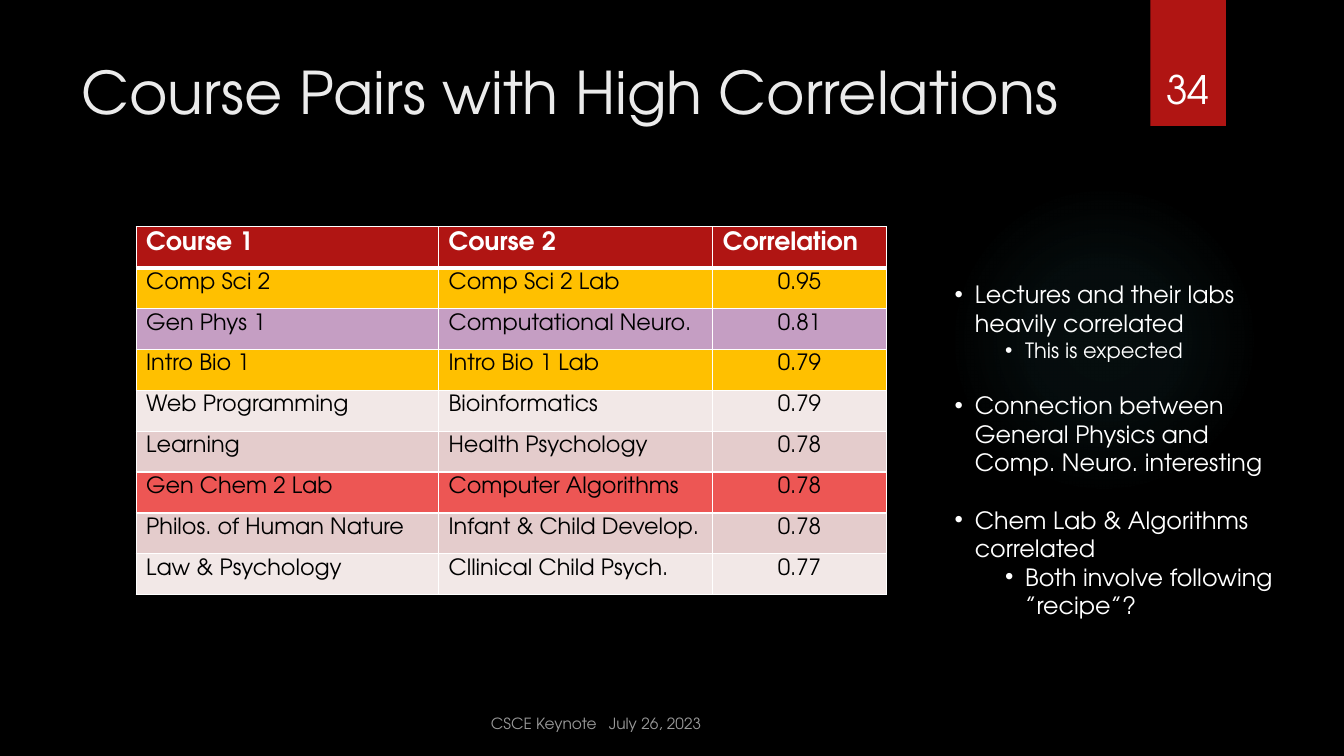
from lxml.etree import SubElement
from pptx import Presentation
from pptx.dml.color import RGBColor
from pptx.enum.shapes import MSO_SHAPE
from pptx.enum.text import MSO_ANCHOR, PP_ALIGN
from pptx.oxml import parse_xml
from pptx.oxml.ns import nsdecls, qn
from pptx.util import Inches, Pt

FONT = "TeX Gyre Adventor"
COLORS = {
    "black": "000000", "white": "FFFFFF", "title": "EBEBEB", "footer": "999999",
    "red": "B01513", "gold": "FFC000", "purple": "C59EC3", "coral": "ED5654",
    "light": "F2E8E7", "dark": "E4CCCC", "glow": "50B9C1",
}
TITLE = "Course Pairs with High Correlations"
PAGE_NUMBER = "34"
FOOTER = "CSCE Keynote\tJuly 26, 2023"
HEADER = ("Course 1", "Course 2", "Correlation")
COURSE_PAIRS = [
    ("gold", "Comp Sci 2", "Comp Sci 2 Lab", "0.95"),
    ("purple", "Gen Phys 1", "Computational Neuro.", "0.81"),
    ("gold", "Intro Bio 1", "Intro Bio 1 Lab", "0.79"),
    ("light", "Web Programming", "Bioinformatics", "0.79"),
    ("dark", "Learning", "Health Psychology", "0.78"),
    ("coral", "Gen Chem 2 Lab", "Computer Algorithms", "0.78"),
    ("dark", "Philos. of Human Nature", "Infant & Child Develop.", "0.78"),
    ("light", "Law & Psychology", "Cllinical Child Psych.", "0.77"),
]
# level, size, text
REMARKS = [
    (0, 17, "Lectures and their labs heavily correlated"),
    (1, 15, "This is expected"),
    (0, 17, "Connection between General Physics and Comp. Neuro. interesting"),
    (0, 17, "Chem Lab & Algorithms correlated"),
    (1, 17, "Both involve following ”recipe”?"),
]
COLUMN_WIDTHS = (3, 2.72, 1.72)
TABLE_HEIGHT = 3.65
GLOW_STOPS = [(0, 7), (36, 6), (69, 0)]  # position and opacity in percent


def rgb(name):
    return RGBColor.from_string(COLORS[name])


def write(para, text, size, color, bold=False):
    span = para.add_run()
    span.text = text
    formats = {"name": FONT, "size": Pt(size), "bold": bold}
    for key, value in formats.items():
        setattr(span.font, key, value)
    span.font.color.rgb = rgb(color)


def add_box(page, place, anchor=MSO_ANCHOR.TOP):
    """Add a wrapping text box and return its text frame."""
    frame = page.shapes.add_textbox(*map(Inches, place)).text_frame
    frame.word_wrap = True
    frame.vertical_anchor = anchor
    return frame


def add_plain_shape(page, kind, place):
    shape = page.shapes.add_shape(kind, *map(Inches, place))
    shape.shadow.inherit = False
    shape.line.fill.background()
    return shape


def add_glow(page):
    glow = add_plain_shape(page, MSO_SHAPE.OVAL, (9.41, 1.83, 3.08, 3.08))
    stops = "".join(
        f'<a:gs pos="{position * 1000}"><a:srgbClr val="{COLORS["glow"]}">'
        f'<a:alpha val="{opacity * 1000}"/></a:srgbClr></a:gs>'
        for position, opacity in GLOW_STOPS)
    gradient = parse_xml(
        f'<a:gradFill {nsdecls("a")}><a:gsLst>{stops}</a:gsLst><a:path path="circle">'
        '<a:fillToRect l="50000" t="50000" r="50000" b="50000"/></a:path></a:gradFill>')
    glow.element.spPr.find(qn("a:prstGeom")).addnext(gradient)


def style_cell(cell, fill, bottom):
    """Set white borders, fill and insets; bottom is the lower border in points."""
    properties = cell._tc.get_or_add_tcPr()
    for side, width in (("L", 1), ("R", 1), ("T", 1), ("B", bottom)):
        line = SubElement(properties, qn(f"a:ln{side}"), w=str(Pt(width)))
        solid = SubElement(line, qn("a:solidFill"))
        SubElement(solid, qn("a:srgbClr"), val=COLORS["white"])
    cell.fill.solid()
    cell.fill.fore_color.rgb = rgb(fill)
    cell.margin_top = Inches(0.05)
    cell.margin_bottom = 0


def add_pairs_table(page):
    rows = [("red", *HEADER), *COURSE_PAIRS]
    size = (sum(COLUMN_WIDTHS), TABLE_HEIGHT)
    table = page.shapes.add_table(
        len(rows), len(HEADER), *map(Inches, (1.35, 2.25, *size))).table
    for column, width in zip(table.columns, COLUMN_WIDTHS):
        column.width = Inches(width)
    for r, (fill, *texts) in enumerate(rows):
        table.rows[r].height = Inches(TABLE_HEIGHT / len(rows))
        head = r == 0
        for c, text in enumerate(texts):
            cell = table.cell(r, c)
            style_cell(cell, fill, bottom=3 if head else 1)
            para = cell.text_frame.paragraphs[0]
            if c == 2 and not head:
                para.alignment = PP_ALIGN.CENTER
            write(para, text, 18 if head else 16, "white" if head else "black", head)


def add_remarks(page):
    frame = add_box(page, (9.37, 2.73, 3.53, 3.5))
    for i, (level, size, text) in enumerate(REMARKS):
        para = frame.paragraphs[0] if i == 0 else frame.add_paragraph()
        properties = para._p.get_or_add_pPr()
        properties.set("marL", str(Inches(0.2 + 0.5 * level)))
        properties.set("indent", str(Inches(-0.2)))
        SubElement(properties, qn("a:buFont"), typeface="Arial")
        SubElement(properties, qn("a:buChar"), char="•")
        para.level = level
        if i and level == 0:
            para.space_before = Pt(20.4)
        write(para, text, size, "white")


def main():
    deck = Presentation()
    deck.slide_width, deck.slide_height = Inches(13.33), Inches(7.5)
    page = deck.slides.add_slide(deck.slide_layouts[6])
    page.background.fill.solid()
    page.background.fill.fore_color.rgb = rgb("black")

    add_glow(page)
    ribbon = add_plain_shape(page, MSO_SHAPE.RECTANGLE, (11.41, 0, 0.75, 1.25))
    ribbon.fill.solid()
    ribbon.fill.fore_color.rgb = rgb("red")

    title = add_box(page, (0.71, 0.5, 10.29, 1.53))
    write(title.paragraphs[0], TITLE, 42, "title")
    add_pairs_table(page)

    footer = add_box(page, (4.77, 6.99, 4.22, 0.33), MSO_ANCHOR.BOTTOM).paragraphs[0]
    tabs = SubElement(footer._p.get_or_add_pPr(), qn("a:tabLst"))
    SubElement(tabs, qn("a:tab"), pos=str(Inches(1.17)), algn="l")
    write(footer, FOOTER, 11, "footer")

    number = add_box(page, (11.32, 0.32, 0.92, 0.84), MSO_ANCHOR.BOTTOM).paragraphs[0]
    number.alignment = PP_ALIGN.CENTER
    write(number, PAGE_NUMBER, 28, "white")
    add_remarks(page)
    deck.save("out.pptx")


if __name__ == "__main__":
    main()
